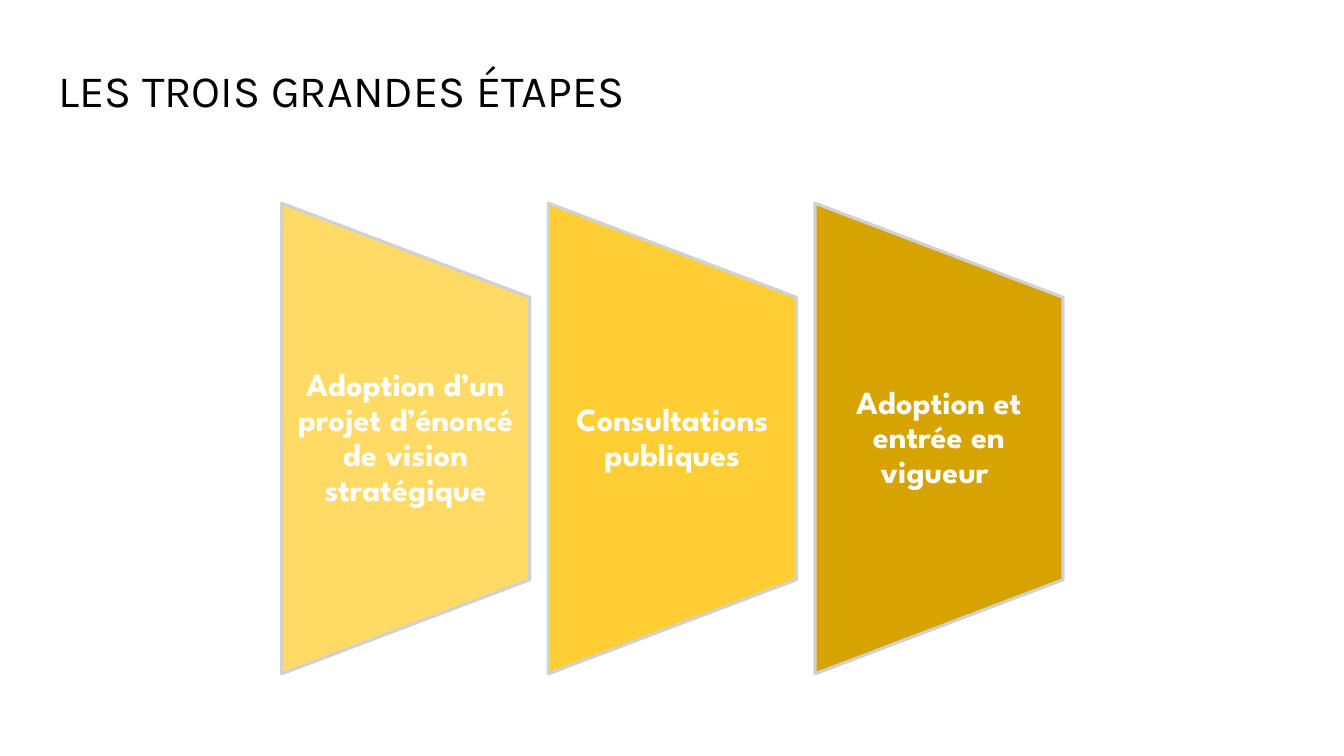
"""Slide presenting the three main steps as a row of tapered panels."""
from dataclasses import dataclass

from pptx import Presentation
from pptx import util as u
from pptx.dml.color import RGBColor
from pptx.enum import shapes, text


@dataclass(frozen=True)
class Theme:
    """Colours, fonts and type sizes of the slide."""
    background: str = "FFFFFF"
    title_ink: str = "000000"
    step_ink: str = "FFFFFF"
    outline: str = "D1D1D1"
    step_fills: tuple = ("FFDA65", "FFCE33", "D6A300")
    title_font: str = "Karla"
    step_font: str = "League Spartan"
    title_size: int = 32
    step_size: int = 23


THEME = Theme()
TITLE = "LES TROIS GRANDES ÉTAPES"
STEPS = (
    "Adoption d’un projet d’énoncé de vision stratégique",
    "Consultations publiques",
    "Adoption et entrée en vigueur ",
)


def write(frame, content, *, font, size, colour, align, bold=False,
          line_spacing=1.0, inset=(0.25, 0.13)):
    """Fill a text frame with one formatted paragraph."""
    frame.word_wrap = True
    frame.vertical_anchor = text.MSO_ANCHOR.MIDDLE
    frame.margin_left = frame.margin_right = u.Cm(inset[0])
    frame.margin_top = frame.margin_bottom = u.Cm(inset[1])
    paragraph = frame.paragraphs[0]
    paragraph.alignment = align
    paragraph.line_spacing = line_spacing
    paragraph.space_before = u.Pt(0)
    run = paragraph.add_run()
    run.text = content
    run.font.name = font
    run.font.size = u.Pt(size)
    run.font.bold = bold
    run.font.color.rgb = RGBColor.from_string(colour)


def place_title(slide, left, top, width, height):
    """Move and format the title placeholder."""
    title = slide.shapes.title
    title.left, title.top = u.Cm(left), u.Cm(top)
    title.width, title.height = u.Cm(width), u.Cm(height)
    write(title.text_frame, TITLE, font=THEME.title_font,
          size=THEME.title_size, colour=THEME.title_ink,
          align=text.PP_ALIGN.LEFT)
    title.text_frame.auto_size = text.MSO_AUTO_SIZE.NONE


def add_step(row, label, fill, left, top, width, height):
    """Draw one panel tapering to the right, with its centred label."""
    panel = row.shapes.add_shape(
        shapes.MSO_SHAPE.FLOWCHART_MANUAL_OPERATION,
        u.Cm(left + (width - height) / 2), u.Cm(top + (height - width) / 2),
        u.Cm(height), u.Cm(width))
    panel.rotation = 270
    panel.shadow.inherit = False
    panel.fill.solid()
    panel.fill.fore_color.rgb = RGBColor.from_string(fill)
    panel.line.color.rgb = RGBColor.from_string(THEME.outline)
    panel.line.width = u.Pt(2.25)

    label_box = row.shapes.add_textbox(
        u.Cm(left), u.Cm(top + height / 5),
        u.Cm(width), u.Cm(height * 3 / 5))
    write(label_box.text_frame, label, font=THEME.step_font,
          size=THEME.step_size, colour=THEME.step_ink, bold=True,
          align=text.PP_ALIGN.CENTER, line_spacing=0.9, inset=(0.4, 0))


def add_steps(slide, left, top, width, height, gap):
    """Share the box equally between the steps."""
    row = slide.shapes.add_group_shape()
    step_width = (width - gap * (len(STEPS) - 1)) / len(STEPS)
    for index, (label, fill) in enumerate(zip(STEPS, THEME.step_fills)):
        add_step(row, label, fill, left + index * (step_width + gap), top,
                 step_width, height)


def main():
    """Build and save the presentation."""
    deck = Presentation()
    deck.slide_width, deck.slide_height = u.Cm(33.87), u.Cm(19.05)
    slide = deck.slides.add_slide(deck.slide_layouts[5])
    slide.background.fill.solid()
    slide.background.fill.fore_color.rgb = RGBColor.from_string(
        THEME.background)
    place_title(slide, 1.22, 1.45, 20.88, 1.63)
    add_steps(slide, 7.1, 5.12, 19.69, 11.86, 0.47)
    deck.save("out.pptx")


if __name__ == "__main__":
    main()
